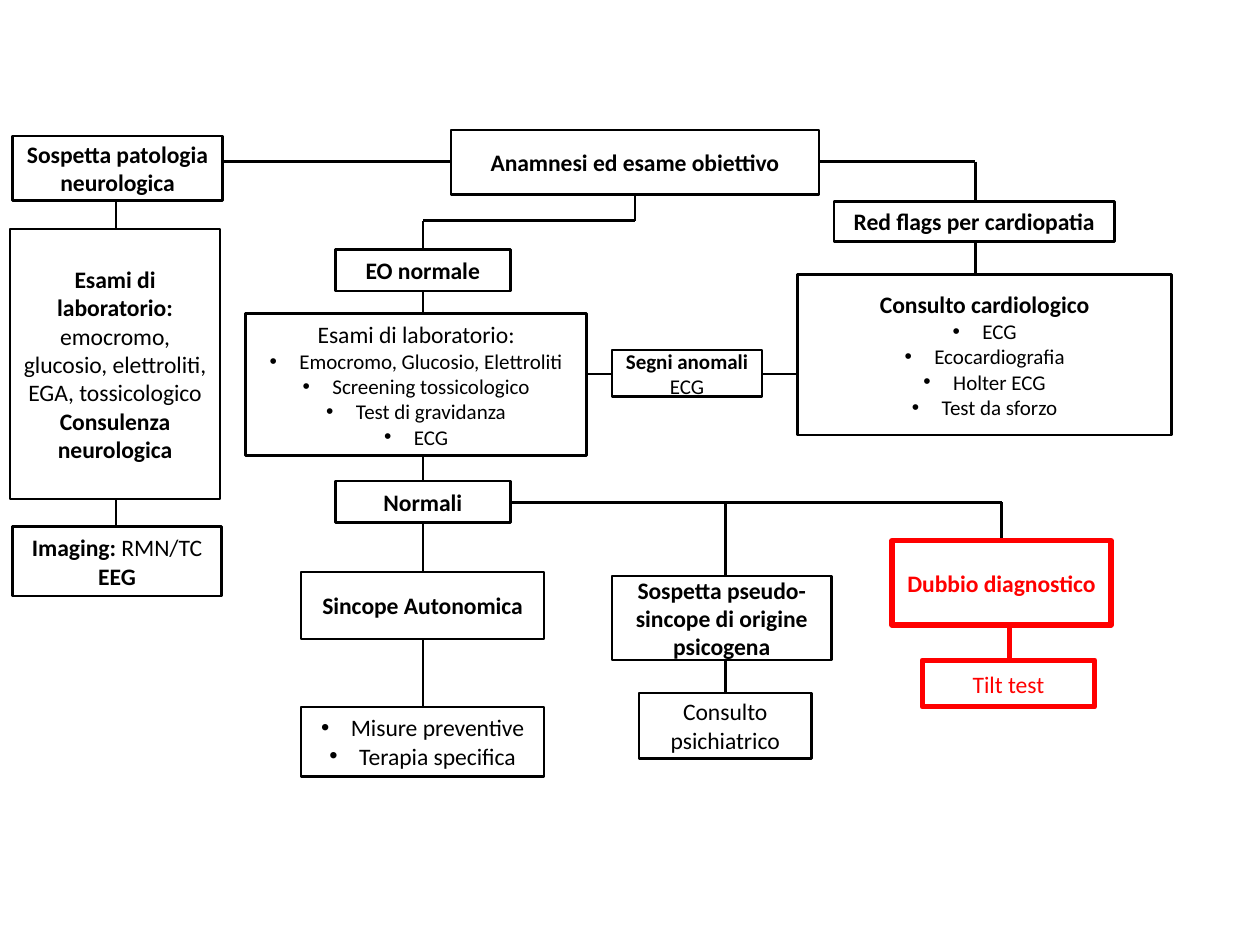
from itertools import pairwise

from lxml.etree import SubElement
from pptx import Presentation
from pptx.dml.color import RGBColor
from pptx.enum.shapes import MSO_CONNECTOR, MSO_SHAPE
from pptx.enum.text import MSO_ANCHOR as ANCHOR, PP_ALIGN as ALIGN
from pptx.oxml.ns import qn
from pptx.util import Cm, Pt

BLACK, WHITE, RED = "000000", "FFFFFF", "FF0000"
HEADING, DETAIL = 13.5, 12


def color(value):
    return RGBColor.from_string(value)


def bold(text):
    return text, True


def plain(text):
    return text, False


def line(*runs, size=HEADING, bullet=False):
    return runs, size, bullet


def bullets(*texts, size=DETAIL):
    return [line(plain(text), size=size, bullet=True) for text in texts]


def add_bullet(paragraph):
    properties = paragraph._p.get_or_add_pPr()
    properties.set("marL", str(Cm(0.6)))
    properties.set("indent", str(-Cm(0.6)))
    SubElement(properties, qn("a:buFont")).set("typeface", "Arial")
    SubElement(properties, qn("a:buChar")).set("char", "•")


def add_step(slide, left, top, width, height, lines, ink=BLACK, weight=1.5):
    step = slide.shapes.add_shape(
        MSO_SHAPE.RECTANGLE, Cm(left), Cm(top), Cm(width), Cm(height))
    step.shadow.inherit = False
    step.fill.solid()
    step.fill.fore_color.rgb = color(WHITE)
    step.line.color.rgb = color(ink)
    step.line.width = Pt(weight)
    frame = step.text_frame
    frame.word_wrap = True
    frame.vertical_anchor = ANCHOR.MIDDLE
    for index, (runs, size, bullet) in enumerate(lines):
        paragraph = frame.add_paragraph() if index else frame.paragraphs[0]
        paragraph.alignment = ALIGN.CENTER
        if bullet:
            add_bullet(paragraph)
        for text, is_bold in runs:
            run = paragraph.add_run()
            run.text = text
            run.font.name = "Calibri"
            run.font.size = Pt(size)
            run.font.bold = is_bold
            run.font.color.rgb = color(ink)


def add_route(slide, *points, ink=BLACK, weight=1.5):
    for (x1, y1), (x2, y2) in pairwise(points):
        link = slide.shapes.add_connector(
            MSO_CONNECTOR.STRAIGHT, Cm(x1), Cm(y1), Cm(x2), Cm(y2))
        link.line.color.rgb = color(ink)
        link.line.width = Pt(weight)
        SubElement(link._element.spPr, qn("a:effectLst"))


def add_spine(slide, x, *spans, **style):
    for start, end in spans:
        add_route(slide, (x, start), (x, end), **style)


def add_history(slide, left, top):
    add_step(slide, left, top, 7.42, 1.3, [line(bold("Anamnesi ed esame obiettivo"))])
    middle = top + 0.64
    add_route(slide, (left, middle), (left - 4.6, middle))
    add_route(slide, (left + 7.42, middle), (left + 10.57, middle),
              (left + 10.57, top + 1.44))
    add_route(slide, (left + 3.71, top + 1.3), (left + 3.71, top + 1.83),
              (left - 0.56, top + 1.83), (left - 0.56, top + 2.41))


def add_neurology(slide, left, top):
    add_step(slide, left + 0.05, top, 4.24, 1.3,
             [line(bold("Sospetta patologia neurologica"))])
    add_step(slide, left, top + 1.88, 4.24, 5.44, [
        line(bold("Esami di laboratorio: "),
             plain("emocromo, glucosio, elettroliti, EGA, tossicologico")),
        line(bold("Consulenza neurologica"))])
    add_step(slide, left + 0.05, top + 7.88, 4.22, 1.4, [
        line(bold("Imaging: "), plain("RMN/TC")), line(bold("EEG"))])
    add_spine(slide, left + 2.14, (top + 1.3, top + 1.88), (top + 7.32, top + 7.88))


def add_normal_exam(slide, left, top):
    add_step(slide, left + 1.81, top, 3.53, 0.84, [line(bold("EO normale"))])
    add_step(slide, left, top + 1.29, 6.88, 2.87, [
        line(plain("Esami di laboratorio:")),
        *bullets("Emocromo, Glucosio, Elettroliti", "Screening tossicologico",
                 "Test di gravidanza", "ECG")])
    add_step(slide, left + 1.81, top + 4.67, 3.53, 0.84, [line(bold("Normali"))])
    add_step(slide, left + 1.12, top + 6.5, 4.9, 1.35,
             [line(bold("Sincope Autonomica"))])
    add_step(slide, left + 1.12, top + 9.22, 4.9, 1.4,
             bullets("Misure preventive", "Terapia specifica", size=HEADING))
    add_spine(slide, left + 3.58, (top + 0.84, top + 1.29), (top + 4.16, top + 4.67),
              (top + 5.51, top + 6.5), (top + 7.85, top + 9.22))
    add_route(slide, (left + 5.34, top + 5.1), (left + 15.24, top + 5.1),
              (left + 15.24, top + 5.87), weight=1.25)


def add_abnormal_signs(slide, left, top):
    add_step(slide, left, top, 3.02, 0.94,
             [line(bold("Segni anomali "), plain("ECG"), size=DETAIL)])
    middle = top + 0.48
    add_route(slide, (left - 0.51, middle), (left, middle))
    add_route(slide, (left + 3.02, middle), (left + 3.74, middle))


def add_cardiology(slide, left, top):
    add_step(slide, left + 0.73, top, 5.66, 0.81,
             [line(bold("Red flags per cardiopatia"))])
    add_step(slide, left, top + 1.48, 7.54, 3.23, [
        line(bold("Consulto cardiologico")),
        *bullets("ECG", "Ecocardiografia", "Holter ECG", "Test da sforzo")])
    add_spine(slide, left + 3.58, (top + 0.81, top + 1.48))


def add_psychiatry(slide, left, top):
    add_step(slide, left, top, 4.42, 1.7,
             [line(bold("Sospetta pseudo-sincope di origine psicogena"))])
    add_step(slide, left + 0.54, top + 2.36, 3.48, 1.32,
             [line(plain("Consulto psichiatrico"))])
    add_spine(slide, left + 2.29, (top - 1.45, top), (top + 1.7, top + 2.36))


def add_doubt(slide, left, top):
    alert = {"ink": RED, "weight": 3}
    add_step(slide, left, top, 4.42, 1.7, [line(bold("Dubbio diagnostico"))], **alert)
    add_step(slide, left + 0.61, top + 2.41, 3.48, 0.94,
             [line(plain("Tilt test"))], **alert)
    add_spine(slide, left + 2.37, (top + 1.7, top + 2.41), **alert)


def main():
    deck = Presentation()
    deck.slide_width, deck.slide_height = Cm(25.4), Cm(19.05)
    slide = deck.slides.add_slide(deck.slide_layouts[6])
    add_history(slide, 9.09, 2.62)
    add_neurology(slide, 0.2, 2.74)
    add_normal_exam(slide, 4.95, 5.03)
    add_abnormal_signs(slide, 12.34, 7.06)
    add_cardiology(slide, 16.08, 4.06)
    add_psychiatry(slide, 12.34, 11.61)
    add_doubt(slide, 17.98, 10.9)
    deck.save("out.pptx")


if __name__ == "__main__":
    main()
